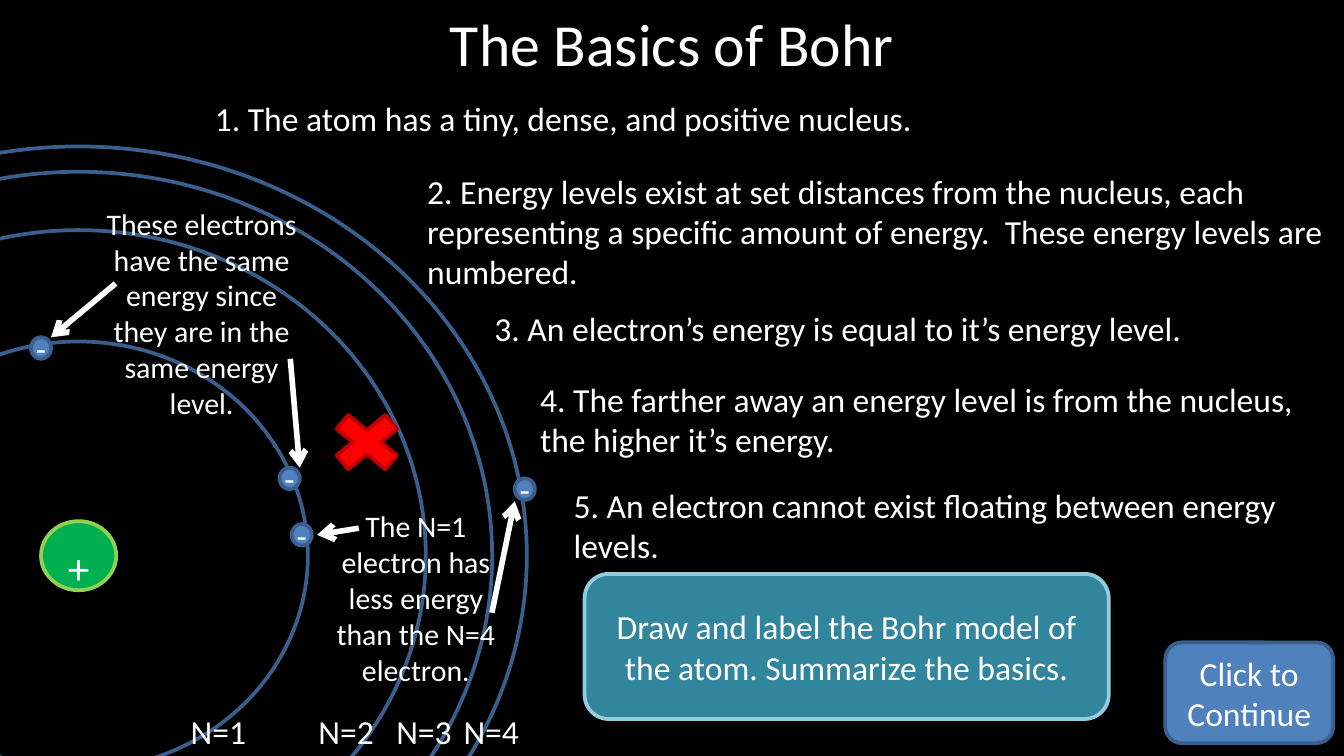
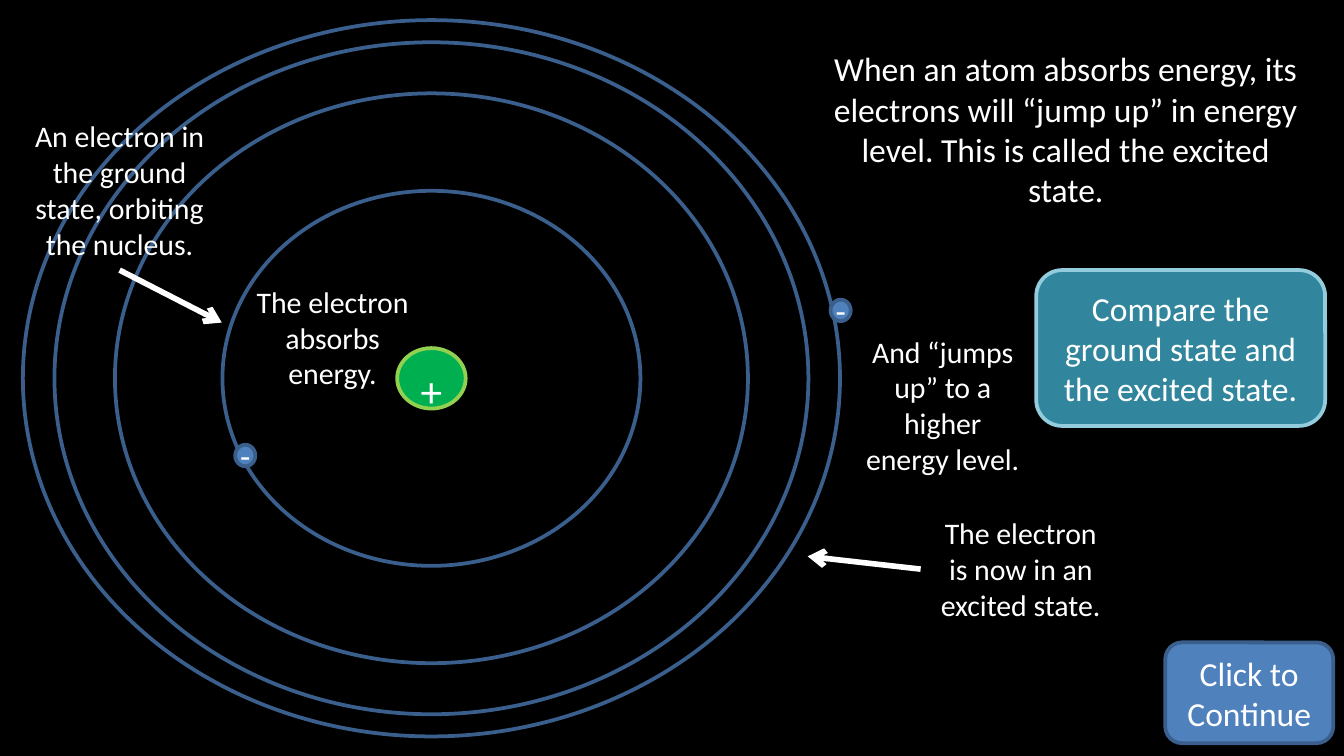
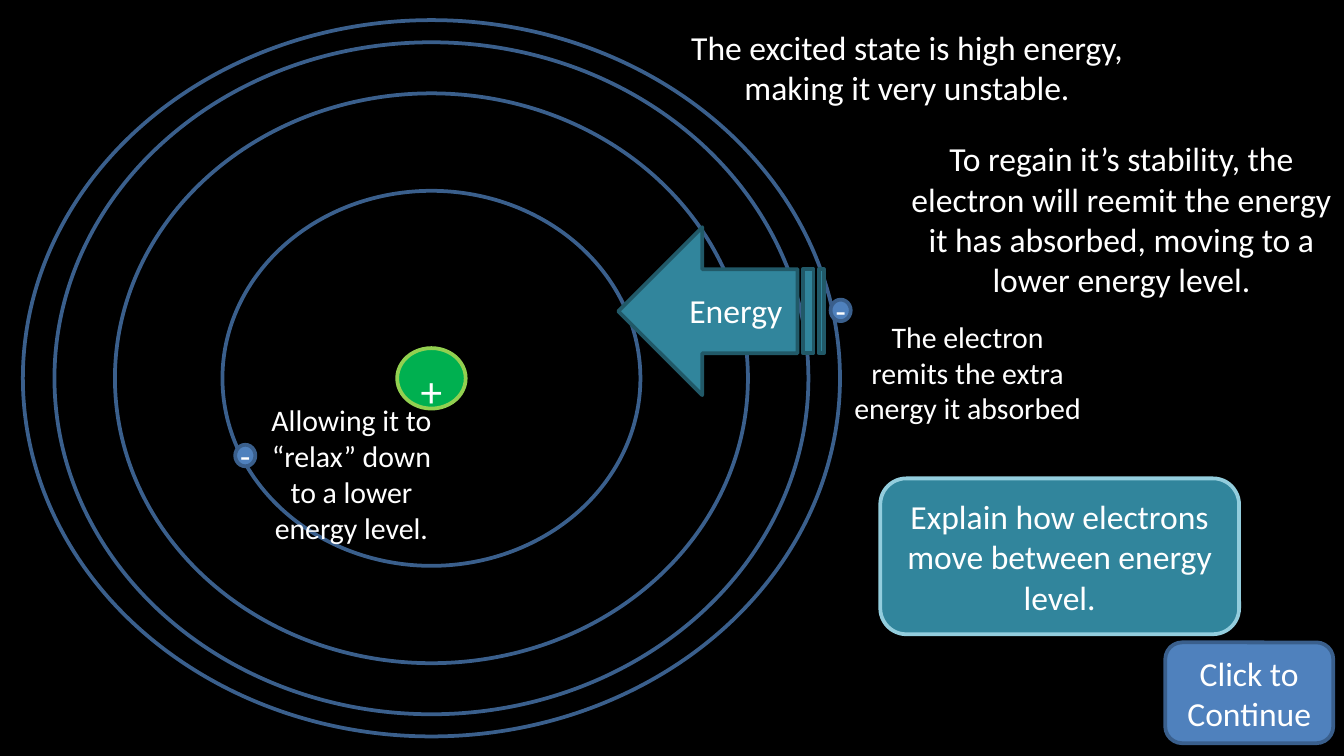
"""Build three slides on the Bohr model of the atom."""
from lxml import etree
from pptx import Presentation
from pptx import util as u
from pptx.dml.color import RGBColor
from pptx.enum import shapes, text
from pptx.oxml.ns import qn

SCALE = 9144
WIDTH, HEIGHT = 1000 * SCALE, 1000 * SCALE * 9 // 16
FONT = "Calibri"
BODY, NOTE, TITLE = 18, 16, 32
COLORS = {
    "space": "000000", "text": "FFFFFF", "orbit": "3A5F8C", "electron": "4F81BD",
    "nucleus": "00B050", "nucleus_edge": "92D050", "prompt": "31859C",
    "prompt_edge": "93CDDD", "energy_edge": "215968", "cross": "FF0000",
    "cross_edge": "C00000",
}
ATOM_SIZE = (608, 533)
NUCLEUS_SIZE = (51, 45)
ORBIT_SIZES = [(311, 279), (471, 424), (561, 500), ATOM_SIZE]
ATOM_BOX = (17, 15, *ATOM_SIZE)
ELECTRON_SIZE = (15, 16)
EXCITED_SPOT = (618, 223)
GROUND_SPOT = (175, 331)
KIND = shapes.MSO_SHAPE
ALIGN = text.PP_ALIGN


def px(*lengths):
    """Turn px lengths into EMU."""
    return [u.Emu(round(length * SCALE)) for length in lengths]


def color(name):
    """Return a named colour."""
    return RGBColor.from_string(COLORS[name])


def write(frame, words, size, align=ALIGN.CENTER):
    """Fill a text frame with one styled paragraph."""
    frame.word_wrap = True
    frame.text = words
    para = frame.paragraphs[0]
    para.alignment = align
    font = para.runs[0].font
    font.name, font.size = FONT, u.Pt(size)
    font.color.rgb = color("text")


def add_note(holder, box, words, size=BODY, align=ALIGN.CENTER):
    """Add a text box that grows with its words."""
    note = holder.add_textbox(*px(*box))
    write(note.text_frame, words, size, align)
    note.text_frame.auto_size = text.MSO_AUTO_SIZE.SHAPE_TO_FIT_TEXT
    return note


def add_figure(holder, kind, box, fill, edge, words="", size=BODY):
    """Add a preset shape with an outline and optional words."""
    figure = holder.add_shape(kind, *px(*box))
    figure.shadow.inherit = False
    if fill:
        figure.fill.solid()
        figure.fill.fore_color.rgb = color(fill)
    else:
        figure.fill.background()
    figure.line.color.rgb = color(edge)
    figure.line.width = u.Pt(2)
    if words:
        write(figure.text_frame, words, size)
        figure.text_frame.vertical_anchor = text.MSO_ANCHOR.MIDDLE
    return figure


def add_arrow(page, start, end, source=None, site=0):
    """Draw a white arrow, joined to a source box when one is given."""
    arrow = page.shapes.add_connector(shapes.MSO_CONNECTOR.STRAIGHT, *px(*start, *end))
    if source:
        arrow.begin_connect(source, site)
    arrow.line.color.rgb = color("text")
    arrow.line.width = u.Pt(3)
    etree.SubElement(arrow.line._get_or_add_ln(), qn("a:tailEnd"), type="arrow")
    etree.SubElement(arrow.element.spPr, qn("a:effectLst"))


def add_atom(holder, box):
    """Draw the nucleus and its concentric energy levels in a box."""
    left, top, width, height = box

    def centred(size):
        """Scale a size to the box and centre it there."""
        wide = size[0] * width / ATOM_SIZE[0]
        high = size[1] * height / ATOM_SIZE[1]
        return left + (width - wide) / 2, top + (height - high) / 2, wide, high

    nucleus = add_figure(holder, KIND.OVAL, centred(NUCLEUS_SIZE), "nucleus",
                         "nucleus_edge", "+", 40)
    frame = nucleus.text_frame
    frame.margin_left = frame.margin_top = frame.margin_right = 0
    frame.margin_bottom = px(20)[0]
    for props in nucleus.element.iter(qn("a:rPr")):
        props.set("baseline", "-25000")
    for size in ORBIT_SIZES:
        add_figure(holder, KIND.OVAL, centred(size), None, "orbit")


def add_electron(page, spot):
    """Place an electron with its top left corner at a spot."""
    add_figure(page.shapes, KIND.OVAL, (*spot, *ELECTRON_SIZE), "electron", "orbit", "-")


def add_prompt(page, box, words):
    """Add a task box and the continue button."""
    add_figure(page.shapes, KIND.ROUNDED_RECTANGLE, box, "prompt", "prompt_edge", words)
    add_figure(page.shapes, KIND.ROUNDED_RECTANGLE, (867, 478, 125, 75),
               "electron", "orbit", "Click to Continue")


def add_energy(page, box):
    """Draw the released energy as a labelled striped arrow."""
    left, top, width, height = box
    group = page.shapes.add_group_shape().shapes
    arrow = add_figure(group, KIND.STRIPED_RIGHT_ARROW, box, "prompt", "energy_edge")
    arrow.rotation = 180
    add_note(group, (left + 17, top + 42, width - 12, 40), "Energy")


def add_page(deck):
    """Add a blank page with a dark background."""
    page = deck.slides.add_slide(deck.slide_layouts[6])
    page.background.fill.solid()
    page.background.fill.fore_color.rgb = color("space")
    return page


def build_basics(page):
    """Lay out the numbered basics around the atom."""
    add_note(page.shapes, (0, 0, 1000, 64), "The Basics of Bohr", TITLE)
    add_atom(page.shapes, (-275, 109, 667, 609))
    basics = [
        ((150, 68, 850, 40), "The atom has a tiny, dense, and positive nucleus."),
        ((308, 122, 692, 101), "Energy levels exist at set distances from the nucleus, each "
         "representing a specific amount of energy.  These energy levels are numbered."),
        ((358, 224, 642, 40), "An electron’s energy is equal to it’s energy level."),
        ((392, 277, 608, 71), "The farther away an energy level is from the nucleus, "
         "the higher it’s energy."),
        ((417, 356, 608, 71), "An electron cannot exist floating between energy levels."),
    ]
    for number, (box, words) in enumerate(basics, 1):
        add_note(page.shapes, box, f"{number}. {words}", align=ALIGN.LEFT)
    for spot in [(23, 251), (208, 348), (217, 390), (383, 356)]:
        add_electron(page, spot)
    add_note(page.shapes, (64, 148, 172, 172), "These electrons have the same energy since "
             "they are in the same energy level.", NOTE)
    add_note(page.shapes, (236, 373, 147, 145), "The N=1 electron has less energy than "
             "the N=4 electron.", NOTE)
    for start, end in [((86, 211), (38, 251)), ((216, 267), (223, 348)),
                       ((267, 393), (236, 398)), ((366, 456), (383, 373))]:
        add_arrow(page, start, end)
    for level, left in enumerate([125, 220, 278, 328], 1):
        add_note(page.shapes, (left, 524, 75, 40), f"N={level}")
    add_figure(page.shapes, KIND.MATH_MULTIPLY, (238, 300, 70, 58), "cross", "cross_edge")
    add_prompt(page, (435, 427, 390, 108),
               "Draw and label the Bohr model of the atom. Summarize the basics.")


def build_excitation(page):
    """Show an electron jumping up to the excited state."""
    add_atom(page.shapes.add_group_shape().shapes, ATOM_BOX)
    add_note(page.shapes, (601, 31, 384, 131), "When an atom absorbs energy, its electrons "
             "will “jump up” in energy level. This is called the excited state.")
    ground = add_note(page.shapes, (3, 83, 172, 118),
                      "An electron in the ground state, orbiting the nucleus.", NOTE)
    add_arrow(page, (89, 201), (165, 240), ground, 2)
    add_electron(page, GROUND_SPOT)
    add_note(page.shapes, (179, 206, 137, 91), "The electron absorbs energy.", NOTE)
    add_electron(page, EXCITED_SPOT)
    add_note(page.shapes, (633, 243, 137, 118), "And “jumps up” to a higher energy level.", NOTE)
    excited = add_note(page.shapes, (685, 378, 149, 91),
                       "The electron is now in an excited state.", NOTE)
    add_arrow(page, (685, 423), (601, 414), excited, 1)
    add_prompt(page, (771, 201, 215, 116), "Compare the ground state and the excited state.")


def build_relaxation(page):
    """Show an electron giving off energy and relaxing."""
    add_atom(page.shapes.add_group_shape().shapes, ATOM_BOX)
    add_note(page.shapes, (483, 15, 384, 71),
             "The excited state is high energy, making it very unstable.")
    add_note(page.shapes, (625, 232, 190, 91),
             "The electron remits the extra energy it absorbed", NOTE)
    add_electron(page, EXCITED_SPOT)
    add_electron(page, GROUND_SPOT)
    add_energy(page, (460, 169, 153, 125))
    add_note(page.shapes, (667, 98, 335, 131), "To regain it’s stability, the electron will "
             "reemit the energy it has absorbed, moving to a lower energy level.")
    add_note(page.shapes, (187, 294, 149, 118),
             "Allowing it to “relax” down to a lower energy level.", NOTE)
    add_prompt(page, (655, 356, 267, 116), "Explain how electrons move between energy level.")


def main():
    """Build and save the deck."""
    deck = Presentation()
    deck.slide_width, deck.slide_height = WIDTH, HEIGHT
    for build in (build_basics, build_excitation, build_relaxation):
        build(add_page(deck))
    deck.save("out.pptx")


if __name__ == "__main__":
    main()
